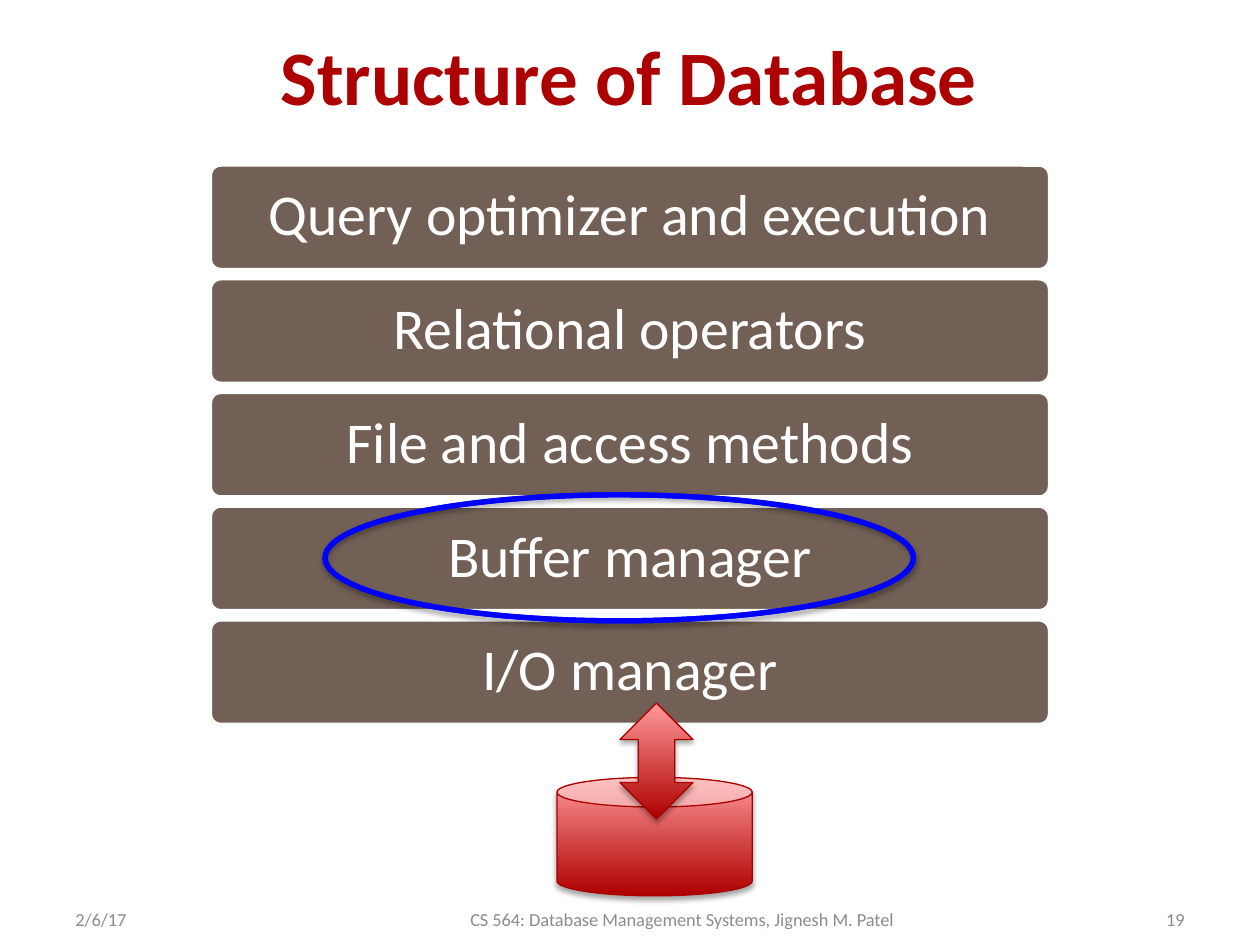
from lxml import etree
from pptx import Presentation
from pptx.dml.color import RGBColor
from pptx.enum import shapes, text
from pptx.oxml import ns
from pptx.util import Inches, Pt

LAYERS = [
    "Query optimizer and execution",
    "Relational operators",
    "File and access methods",
    "Buffer manager",
    "I/O manager",
]
KINDS = shapes.MSO_SHAPE
ALIGN = text.PP_ALIGN


def color(hex_code):
    """Turn a hex string into a colour."""
    return RGBColor.from_string(hex_code)


def write(shape, words, size, ink, align, bold=False, spacing=None):
    """Fill a shape with one vertically centred paragraph."""
    frame = shape.text_frame
    frame.word_wrap = True
    frame.vertical_anchor = text.MSO_ANCHOR.MIDDLE
    paragraph = frame.paragraphs[0]
    paragraph.text = words
    paragraph.alignment = align
    paragraph.line_spacing = spacing
    font = paragraph.font
    font.name, font.size, font.bold = "Calibri", Pt(size), bold
    font.color.rgb = color(ink)


def add_label(slide, box, *style, **options):
    """Place a text box with one styled paragraph."""
    write(slide.shapes.add_textbox(*map(Inches, box)), *style, **options)


def add_outlined(slide, kind, box, line, width):
    """Place a preset shape with an outline and no inherited shadow."""
    shape = slide.shapes.add_shape(kind, *map(Inches, box))
    shape.shadow.inherit = False
    shape.line.color.rgb = color(line)
    shape.line.width = Pt(width)
    return shape


def add_glossy(slide, kind, box, line="AA0000", width=0.75):
    """Place a red gradient shape with a soft shadow below it."""
    shape = add_outlined(slide, kind, box, line, width)
    shape.fill.gradient()
    shape.fill.gradient_angle = 90
    for stop, shade in zip(shape.fill.gradient_stops, ("AE0000", "FF9999")):
        stop.color.rgb = color(shade)
    effects = shape.element.spPr.find(ns.qn("a:effectLst"))
    shadow = etree.SubElement(
        effects, ns.qn("a:outerShdw"), blurRad=str(Pt(3.1)), dist=str(Pt(1.8)),
        dir="5400000", rotWithShape="0")
    black = etree.SubElement(shadow, ns.qn("a:srgbClr"), val="000000")
    etree.SubElement(black, ns.qn("a:alpha"), val="35000")
    return shape


def add_layers(slide, left, top, width, height):
    """Stack the database layers in equal bars and ring the buffer manager."""
    bar_height = 0.83
    pitch = (height - bar_height) / (len(LAYERS) - 1)
    for index, layer in enumerate(LAYERS):
        box = (left, top + index * pitch, width, bar_height)
        bar = add_outlined(slide, KINDS.ROUNDED_RECTANGLE, box, "FFFFFF", 2)
        bar.adjustments[0] = 0.1
        bar.fill.solid()
        bar.fill.fore_color.rgb = color("726056")
        write(bar, layer, 33, "FFFFFF", ALIGN.CENTER, spacing=0.9)
    ring_top = top + LAYERS.index("Buffer manager") * pitch - 0.09
    ring = add_glossy(slide, KINDS.DONUT, (left + 0.91, ring_top, 4.67, 1), "0000FF", 3)
    ring.adjustments[0] = 0


def add_storage(slide, left, top, width, height):
    """Draw the disk and the arrow that links it to the layers above."""
    disk_height, arrow_width = 0.94, 0.58
    disk_top = top + height - disk_height
    add_glossy(slide, KINDS.CAN, (left, disk_top, width, disk_height))
    arrow_box = (left + 0.5, top, arrow_width, 0.92)
    add_glossy(slide, KINDS.UP_DOWN_ARROW, arrow_box)


def add_footer(slide, left, top, width, height):
    """Write the date, course and page number along the bottom."""
    parts = [
        ("2/6/17", 0, 2.33, ALIGN.LEFT),
        ("CS 564: Database Management Systems, Jignesh M. Patel", 2.5, 4.83, ALIGN.CENTER),
        ("19", width - 1.5, 1.5, ALIGN.RIGHT),
    ]
    for words, offset, part_width, align in parts:
        add_label(slide, (left + offset, top, part_width, height), words, 10.5, "8C8C8C", align)


def main():
    """Build and save the slide."""
    deck = Presentation()
    deck.slide_width, deck.slide_height = Inches(10), Inches(7.5)
    slide = deck.slides.add_slide(deck.slide_layouts[6])
    add_label(slide, (0.12, 0.1, 9.75, 0.98), "Structure of Database", 44, "AD0101",
              ALIGN.CENTER, bold=True)
    add_footer(slide, 0.5, 7.17, 9, 0.25)
    add_layers(slide, 1.67, 1.31, 6.66, 4.44)
    add_storage(slide, 4.42, 5.58, 1.55, 1.53)
    deck.save("out.pptx")


if __name__ == "__main__":
    main()
